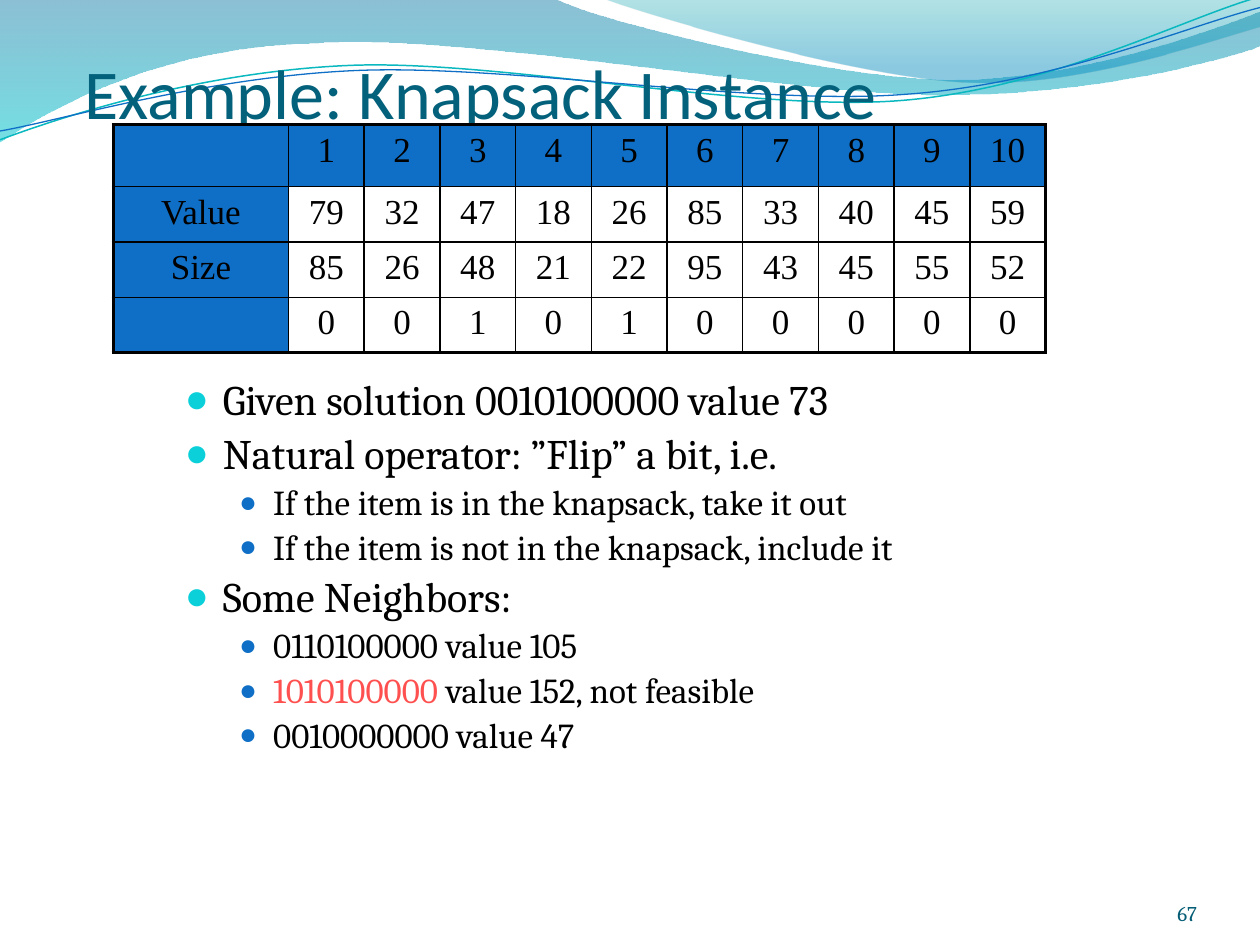
from lxml import etree
from pptx import Presentation
from pptx.dml.color import RGBColor
from pptx.enum.text import MSO_ANCHOR, PP_ALIGN
from pptx.oxml.ns import qn
from pptx.util import Inches, Pt

TOP, BOTTOM = MSO_ANCHOR.TOP, MSO_ANCHOR.BOTTOM
LEFT, CENTER, RIGHT = PP_ALIGN.LEFT, PP_ALIGN.CENTER, PP_ALIGN.RIGHT

BLACK, BLUE, CYAN, RED = "000000", "0F6FC6", "0BD0D9", "FF5050"

# Each outline: a start point, then line ends (2 numbers) or curves (6 numbers).
WAVE = [(0, 0), (4.4, -0.01), (4.76, 0.17, 6.64, 0.63, 7.58, 0.63),
        (8.53, 0.63, 9.58, 0.26, 10, 0.09), (10.01, 0.36),
        (9.83, 0.44, 8.7, 0.76, 7.46, 0.75), (6.22, 0.75, 3.82, 0.28, 2.57, 0.34),
        (1.29, 0.36, 0.46, 0.83, -0.01, 1.13), (0, 0)]
CREST = [(4.79, -0.01), (5.09, 0.11, 6.82, 0.62, 7.69, 0.65),
         (8.56, 0.69, 9.61, 0.32, 10, 0.21), (10, 0), (4.79, -0.01)]
TEAL_LINE = [(0, 1.11), (0.48, 0.93, 1.58, 0.57, 2.77, 0.52),
             (3.95, 0.47, 5.93, 0.89, 7.13, 0.8), (8.33, 0.71, 9.38, 0.15, 9.98, -0.02)]
BLUE_LINE = [(0, 1.04), (0.47, 0.96, 1.64, 0.61, 2.83, 0.56),
             (4.03, 0.51, 5.97, 0.84, 7.17, 0.75), (8.36, 0.67, 9.41, 0.21, 10, 0.06)]

ROWS = [
    ["", *range(1, 11)],
    ["Value", 79, 32, 47, 18, 26, 85, 33, 40, 45, 59],
    ["Size", 85, 26, 48, 21, 22, 95, 43, 45, 55, 52],
    ["", 0, 0, 1, 0, 1, 0, 0, 0, 0, 0],
]
WIDE, FIRST = 7.4, 1.39
WIDTHS = [FIRST] + [(WIDE - FIRST) / 10] * 10
HEIGHTS = [0.49] + [0.44] * 3

# Level, then runs of text and colour.
POINTS = [
    (0, [("Given solution 0010100000 value 73", BLACK)]),
    (0, [("Natural operator: ”Flip” a bit, i.e.", BLACK)]),
    (1, [("If the item is in the knapsack, take it out", BLACK)]),
    (1, [("If the item is not in the knapsack, include it", BLACK)]),
    (0, [("Some Neighbors:", BLACK)]),
    (1, [("0110100000 value 105", BLACK)]),
    (1, [("1010100000", RED), (" value 152, not feasible", BLACK)]),
    (1, [("0010000000 value 47", BLACK)]),
]
# Per level: font size, bullet colour, bullet size, left margin, hanging indent.
LEVELS = [(24, CYAN, 95, 0.3, 0.3), (20, BLUE, 85, 0.7, 0.27)]


def rgb(code):
    return RGBColor.from_string(code)


def add(node, tag, **attrs):
    """Append an XML child and return it."""
    return etree.SubElement(node, qn(tag), {k: str(v) for k, v in attrs.items()})


def bend(shape, parts):
    """Turn the straight segments that have control points into curves."""
    lines = list(shape._element.iter(qn("a:lnTo")))
    for line, part in zip(lines, parts):
        if len(part) == 6:
            curve = etree.Element(qn("a:cubicBezTo"))
            for x, y in zip(part[::2], part[1::2]):
                add(curve, "a:pt", x=Inches(x) - shape.left, y=Inches(y) - shape.top)
            line.getparent().replace(line, curve)


def gap(par):
    """Space before of a fifth of a line."""
    add(add(par._p.get_or_add_pPr(), "a:spcBef"), "a:spcPct", val=20000)


class Deck:
    head, body, grid = "Calibri", "Cambria", "Times New Roman"

    def __init__(self):
        self.prs = Presentation()
        self.prs.slide_width, self.prs.slide_height = Inches(10), Inches(7.5)
        self.slide = self.prs.slides.add_slide(self.prs.slide_layouts[6])
        self.shapes = self.slide.shapes

    def font(self, run, size, face, color):
        run.font.size, run.font.name = Pt(size), face
        run.font.color.rgb = rgb(color)

    def outline(self, trail, close):
        ends = [tuple(map(Inches, part[-2:])) for part in trail]
        pen = self.shapes.build_freeform(*ends[0])
        pen.add_line_segments(ends[1:], close=close)
        shape = pen.convert_to_shape()
        bend(shape, trail[1:])
        shape.shadow.inherit = False
        return shape

    def wave(self, trail, stops):
        """Closed outline; stops are (position, colour, opacity in percent)."""
        shape = self.outline(trail, True)
        shape.line.fill.background()
        shape.fill.gradient()
        shape.fill.gradient_angle = 270
        for stop, (pos, color, alpha) in zip(shape.fill.gradient_stops, stops):
            stop.position = pos
            stop.color.rgb = rgb(color)
            tint = stop._gs.find(qn("a:srgbClr"))
            add(tint, "a:alpha", val=alpha * 1000)

    def curve(self, trail, color, width):
        shape = self.outline(trail, False)
        shape.fill.background()
        shape.line.color.rgb = rgb(color)
        shape.line.width = Pt(width)

    def box(self, area, inset, anchor=TOP):
        frame = self.shapes.add_textbox(*map(Inches, area)).text_frame
        frame.word_wrap, frame.vertical_anchor = True, anchor
        (frame.margin_left, frame.margin_top,
         frame.margin_right, frame.margin_bottom) = map(Inches, inset)
        return frame

    def label(self, area, text, size, face, color, inset=(0, 0, 0, 0), align=LEFT):
        frame = self.box(area, inset, BOTTOM)
        frame.text = text
        par = frame.paragraphs[0]
        par.alignment = align
        self.font(par.runs[0], size, face, color)

    def bullets(self, area, points):
        frame = self.box(area, (0.1, 0.05, 0.1, 0.05))
        for n, (level, parts) in enumerate(points):
            par = frame.add_paragraph() if n else frame.paragraphs[0]
            size, color, scale, left, hang = LEVELS[level]
            par.level, par.line_spacing = level, 0.9
            gap(par)
            props = par._p.get_or_add_pPr()
            props.set("marL", str(Inches(left)))
            props.set("indent", str(-Inches(hang)))
            add(add(props, "a:buClr"), "a:srgbClr", val=color)
            add(props, "a:buSzPct", val=scale * 1000)
            add(props, "a:buFont", typeface=self.grid)
            add(props, "a:buChar", char="●")
            for text, ink in parts:
                run = par.add_run()
                run.text = text
                self.font(run, size, self.body, ink)

    def borders(self, cell, sides):
        props = cell._tc.get_or_add_tcPr()
        for side, outer in sides.items():
            line = add(props, "a:ln" + side, w=Pt(2.25 if outer else 1))
            add(add(line, "a:solidFill"), "a:srgbClr", val=BLACK)

    def table(self, area, rows, widths, heights):
        last, end = len(rows) - 1, len(rows[0]) - 1
        table = self.shapes.add_table(last + 1, end + 1, *map(Inches, area)).table
        table.first_row = table.horz_banding = False
        for col, width in zip(table.columns, widths):
            col.width = Inches(width)
        for row, height in zip(table.rows, heights):
            row.height = Inches(height)
        for r, row in enumerate(rows):
            for c, value in enumerate(row):
                cell = table.cell(r, c)
                self.borders(cell, {"L": c == 0, "R": c == end, "T": r == 0, "B": r == last})
                if r == 0 or c == 0:
                    cell.fill.solid()
                    cell.fill.fore_color.rgb = rgb(BLUE)
                else:
                    cell.fill.background()
                if value == "":
                    continue
                cell.text_frame.text = str(value)
                par = cell.text_frame.paragraphs[0]
                par.alignment = CENTER
                gap(par)
                self.font(par.runs[0], 20, self.grid, BLACK)


def main():
    deck = Deck()
    deck.wave(WAVE, [(0, "0074A1", 45), (1, "00C6CF", 55)])
    deck.wave(CREST, [(0, "00A1A9", 30), (0.8, "008BBF", 45)])
    deck.curve(TEAL_LINE, "0AB8BF", 0.85)
    deck.curve(BLUE_LINE, BLUE, 0.75)
    deck.label((0.67, -0.19, 8.5, 1.25), "Example: Knapsack Instance", 40,
               deck.head, "04617B", inset=(0, 0.05, 0, 0))
    deck.bullets((1.37, 2.96, 7.64, 3.39), POINTS)
    deck.table((0.9, 0.99, WIDE, sum(HEIGHTS)), ROWS, WIDTHS, HEIGHTS)
    deck.label((8.67, 6.95, 0.83, 0.4), "67", 12, deck.body, "045D75", align=RIGHT)
    deck.prs.save("out.pptx")


if __name__ == "__main__":
    main()
